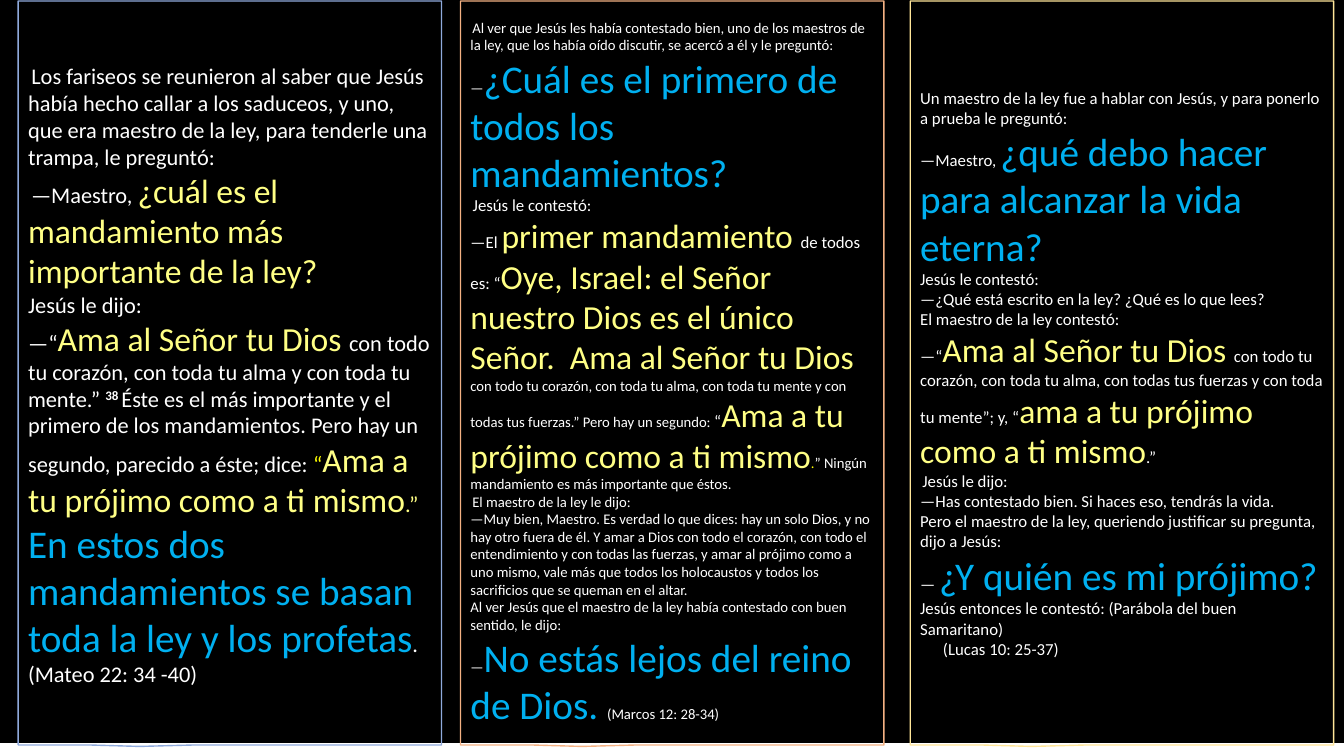
from dataclasses import dataclass

from pptx import Presentation
from pptx.dml.color import RGBColor
from pptx.enum.shapes import MSO_SHAPE as Preset
from pptx.enum.text import MSO_ANCHOR as Anchor, PP_ALIGN as Align
from pptx.shapes.autoshape import Shape
from pptx.slide import Slide
from pptx.util import Pt


@dataclass(frozen=True)
class Theme:
    font: str = "Calibri"
    backdrop: str = "000000"
    text: str = "FFFFFF"
    commandment: str = "FFFF85"
    accent: str = "FFFF00"
    highlight: str = "00B0F0"
    commandment_size: float = 24
    highlight_size: float = 28
    matthew_size: float = 16
    mark_size: float = 18
    mark_text_size: float = 10.5
    luke_size: float = 12


THEME = Theme()


@dataclass(frozen=True)
class Span:
    """A stretch of text; without a size it takes the panel's body size."""
    text: str
    size: float | None = None
    color: str = THEME.text
    raised: bool = False


@dataclass(frozen=True)
class Line:
    spans: tuple[Span, ...]
    indent: float = 0


@dataclass(frozen=True)
class Panel:
    left: float
    border: str
    body_size: float
    lines: tuple[Line, ...]


def line(*parts: Span | str, indent: float = 0) -> Line:
    """Make a paragraph in which bare strings are body text."""
    return Line(tuple(Span(part) if isinstance(part, str) else part for part in parts), indent)


def commandment(text: str) -> Span:
    return Span(text, THEME.commandment_size, THEME.commandment)


def highlight(text: str) -> Span:
    return Span(text, THEME.highlight_size, THEME.highlight)


def verse(text: str = " ", size: float | None = None) -> Span:
    """A raised bold verse mark."""
    return Span(text, size, raised=True)


MATTHEW = (
    line(verse(size=THEME.mark_size),
         "Los fariseos se reunieron al saber que Jesús había hecho callar a los saduceos, y uno, "
         "que era maestro de la ley, para tenderle una trampa, le preguntó:"),
    line(verse(), "—Maestro, ", commandment("¿cuál es el mandamiento más importante de la ley?")),
    line("Jesús le dijo:"),
    line("—“", commandment("Ama al Señor tu Dios "),
         "con todo tu corazón, con toda tu alma y con toda tu mente.” ", verse("38 "),
         "Éste es el más importante y el primero de los mandamientos. Pero hay un segundo, "
         "parecido a éste; dice: ",
         Span("“", color=THEME.accent), commandment("Ama a tu prójimo como a ti mismo"),
         Span(".”  ", color=THEME.commandment),
         highlight("En estos dos mandamientos se basan toda la ley y los profetas"),
         ". (Mateo 22: 34 -40)"),
)

MARK = (
    line(verse(),
         "Al ver que Jesús les había contestado bien, uno de los maestros de la ley, que los había "
         "oído discutir, se acercó a él y le preguntó:"),
    line("—", highlight("¿Cuál es el primero de todos los mandamientos?")),
    line(verse(size=THEME.luke_size), Span("Jesús le contestó:", THEME.luke_size)),
    line(Span("—El ", THEME.luke_size), commandment("primer mandamiento "),
         Span("de todos es: “", THEME.luke_size),
         commandment("Oye, Israel: el Señor nuestro Dios es el único Señor.  Ama al Señor tu Dios "),
         "con todo tu corazón, con toda tu alma, con toda tu mente y con todas tus fuerzas.” "
         "Pero hay un segundo: ",
         Span("“", THEME.luke_size), commandment("Ama a tu prójimo como a ti mismo"),
         Span(".", color=THEME.accent), "” Ningún mandamiento es más importante que éstos."),
    line(verse(), "El maestro de la ley le dijo:"),
    line("—Muy bien, Maestro. Es verdad lo que dices: hay un solo Dios, y no hay otro fuera de él. "
         "Y amar a Dios con todo el corazón, con todo el entendimiento y con todas las fuerzas, "
         "y amar al prójimo como a uno mismo, vale más que todos los holocaustos y todos los "
         "sacrificios que se queman en el altar."),
    line("Al ver Jesús que el maestro de la ley había contestado con buen sentido, le dijo:"),
    line("—", highlight("No estás lejos del reino de Dios. "), "(Marcos 12: 28-34)"),
)

LUKE = (
    line("Un maestro de la ley fue a hablar con Jesús, y para ponerlo a prueba le preguntó:"),
    line("—Maestro, ", highlight("¿qué debo hacer para alcanzar la vida eterna?")),
    line("Jesús le contestó:"),
    line("—¿Qué está escrito en la ley? ¿Qué es lo que lees?"),
    line("El maestro de la ley contestó:"),
    line("—“", commandment("Ama al Señor tu Dios "),
         "con todo tu corazón, con toda tu alma, con todas tus fuerzas y con toda tu mente”; y, “",
         commandment("ama a tu prójimo como a ti mismo"), ".”"),
    line(verse(), "Jesús le dijo:"),
    line("—Has contestado bien. Si haces eso, tendrás la vida."),
    line("Pero el maestro de la ley, queriendo justificar su pregunta, dijo a Jesús:"),
    line("— ", highlight("¿Y quién es mi prójimo?")),
    line("Jesús entonces le contestó: (Parábola del buen Samaritano)"),
    line("(Lucas 10: 25-37)", indent=16.3),
)

PANELS = (
    Panel(13, "8FAADC", THEME.matthew_size, MATTHEW),
    Panel(329, "F4B183", THEME.mark_text_size, MARK),
    Panel(650.2, "FFE699", THEME.luke_size, LUKE),
)
PANEL_TOP, PANEL_WIDTH, PANEL_HEIGHT = 0.7, 302.4, 531.4
SLIDE_WIDTH, SLIDE_HEIGHT = 960, 540


def add_outlined_shape(slide: Slide, preset: Preset, left: float, top: float,
                       width: float, height: float, border: str) -> Shape:
    shape = slide.shapes.add_shape(preset, Pt(left), Pt(top), Pt(width), Pt(height))
    shape.shadow.inherit = False
    shape.line.color.rgb = RGBColor.from_string(border)
    shape.line.width = Pt(1)
    return shape


def add_panel(slide: Slide, panel: Panel) -> None:
    shape = add_outlined_shape(slide, Preset.RECTANGULAR_CALLOUT, panel.left, PANEL_TOP,
                               PANEL_WIDTH, PANEL_HEIGHT, panel.border)
    shape.adjustments[0], shape.adjustments[1] = -0.213, 0.502
    shape.fill.background()
    text_frame = shape.text_frame
    text_frame.word_wrap = True
    text_frame.vertical_anchor = Anchor.MIDDLE
    for index, content in enumerate(panel.lines):
        paragraph = text_frame.add_paragraph() if index else text_frame.paragraphs[0]
        paragraph.alignment = Align.LEFT
        if content.indent:
            paragraph._p.get_or_add_pPr().set("marL", str(Pt(content.indent)))
        for span in content.spans:
            run = paragraph.add_run()
            run.text = span.text
            run.font.name = THEME.font
            run.font.size = Pt(span.size or panel.body_size)
            run.font.color.rgb = RGBColor.from_string(span.color)
            if span.raised:
                run.font.bold = True
                run._r.get_or_add_rPr().set("baseline", "30000")


def main() -> None:
    presentation = Presentation()
    presentation.slide_width, presentation.slide_height = Pt(SLIDE_WIDTH), Pt(SLIDE_HEIGHT)
    slide = presentation.slides.add_slide(presentation.slide_layouts[6])
    backdrop = add_outlined_shape(slide, Preset.RECTANGLE, 0, -16.6, SLIDE_WIDTH, 547.2,
                                  THEME.backdrop)
    backdrop.fill.solid()
    backdrop.fill.fore_color.rgb = RGBColor.from_string(THEME.backdrop)
    for panel in PANELS:
        add_panel(slide, panel)
    presentation.save("out.pptx")


if __name__ == "__main__":
    main()
